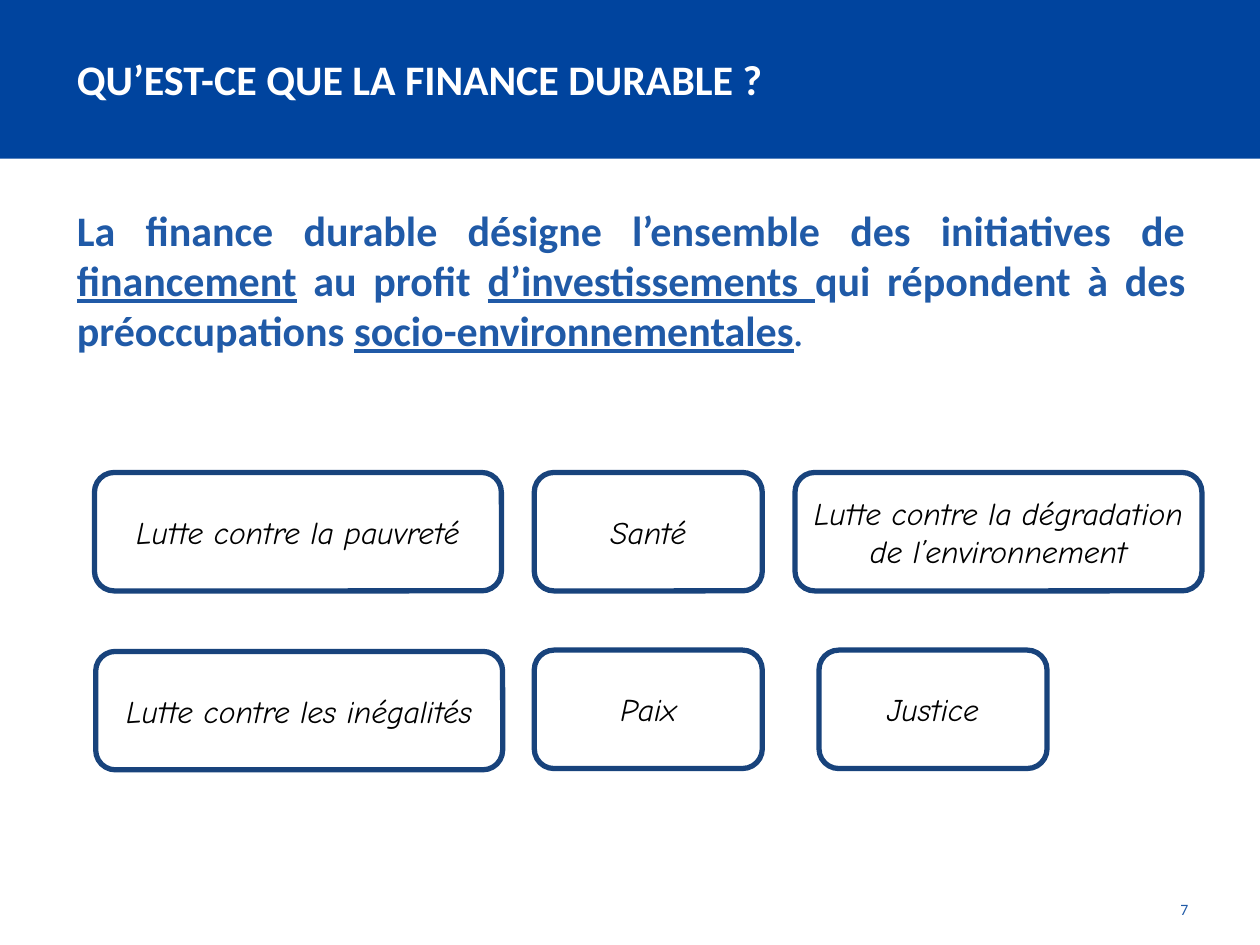
from lxml.etree import SubElement
from pptx import Presentation
from pptx.dml.color import RGBColor
from pptx.enum.shapes import MSO_SHAPE as Shape
from pptx.enum.text import MSO_ANCHOR as Anchor, MSO_AUTO_SIZE as AutoSize, PP_ALIGN as Align
from pptx.oxml.ns import qn
from pptx.util import Inches, Pt

BANNER_BLUE, TEXT_BLUE, BORDER_BLUE = "00449E", "205AA7", "18437C"
WHITE, BLACK = "FFFFFF", "000000"

TITLE = "QU’EST-CE QUE LA FINANCE DURABLE ?"
# Definition as (text, underlined) pieces
DEFINITION = [
    ("La finance durable désigne l’ensemble des initiatives de ", False),
    ("financement", True),
    (" au profit ", False),
    ("d’investissements ", True),
    ("qui répondent à des préoccupations ", False),
    ("socio-environnementales", True),
]
WIDE, NARROW, THEME_HEIGHT = 3.23, 1.81, 0.94
# Themes as (text, left, top, width)
THEMES = [
    ("Lutte contre la pauvreté", 0.75, 3.75, WIDE),
    ("Santé", 4.24, 3.75, NARROW),
    ("Lutte contre la dégradation de l’environnement", 6.31, 3.75, WIDE),
    ("Lutte contre les inégalités", 0.76, 5.17, WIDE),
    ("Paix", 4.24, 5.16, NARROW),
    ("Justice", 6.5, 5.16, NARROW),
]


def color(value):
    return RGBColor.from_string(value)


def place(element, left, top, width, height):
    element.left, element.top = Inches(left), Inches(top)
    element.width, element.height = Inches(width), Inches(height)


def style(run, size, ink, face="Calibri", bold=False, italic=False, underline=False):
    font = run.font
    font.size, font.name = Pt(size), face
    font.bold, font.italic, font.underline = bold, italic, underline
    font.color.rgb = color(ink)


def add_banner(slide):
    banner = slide.shapes.add_shape(Shape.RECTANGLE, 0, 0, Inches(10), Inches(1.26))
    banner.shadow.inherit = False
    banner.fill.solid()
    banner.fill.fore_color.rgb = color(BANNER_BLUE)
    banner.line.fill.background()
    # Behind the placeholders
    slide.shapes._spTree.insert(2, banner._element)


def fill_title(title):
    place(title, 0.51, 0, 9, 1.25)
    frame = title.text_frame
    frame.text = TITLE
    frame.auto_size = AutoSize.NONE
    frame.vertical_anchor = Anchor.MIDDLE
    heading = frame.paragraphs[0]
    heading.alignment = Align.LEFT
    style(heading.runs[0], 24, WHITE, bold=True)


def fill_definition(body):
    place(body, 0.51, 1.57, 9, 1.62)
    body.text_frame.auto_size = AutoSize.NONE
    definition = body.text_frame.paragraphs[0]
    definition.alignment = Align.JUSTIFY
    definition.space_before = Pt(0)
    # Plain paragraph: no indent, no bullet
    properties = definition._p.get_or_add_pPr()
    properties.set("marL", "0")
    properties.set("indent", "0")
    SubElement(properties, qn("a:buNone"))
    for text, underlined in DEFINITION:
        piece = definition.add_run()
        piece.text = text
        style(piece, 24, TEXT_BLUE, bold=True, underline=underlined)
    period = definition.add_run()
    period.text = "."
    style(period, 24, TEXT_BLUE, italic=True)


def add_theme(slide, text, left, top, width):
    theme = slide.shapes.add_shape(Shape.ROUNDED_RECTANGLE, Inches(left), Inches(top),
                                   Inches(width), Inches(THEME_HEIGHT))
    theme.shadow.inherit = False
    theme.fill.solid()
    theme.fill.fore_color.rgb = color(WHITE)
    theme.line.color.rgb = color(BORDER_BLUE)
    theme.line.width = Pt(3)
    frame = theme.text_frame
    frame.text = text
    frame.word_wrap = True
    frame.vertical_anchor = Anchor.MIDDLE
    label = frame.paragraphs[0]
    label.alignment = Align.CENTER
    style(label.runs[0], 18, BLACK, face="Comic Neue", italic=True)


def add_page_number(slide, number):
    page = slide.shapes.add_textbox(Inches(8.94), Inches(7.09), Inches(0.59), Inches(0.39))
    page.text_frame.text = number
    page.text_frame.word_wrap = True
    line = page.text_frame.paragraphs[0]
    line.alignment = Align.RIGHT
    style(line.runs[0], 9, TEXT_BLUE)


def main():
    deck = Presentation()
    deck.slide_width, deck.slide_height = Inches(10), Inches(7.5)
    slide = deck.slides.add_slide(deck.slide_layouts[1])

    # Heading and definition
    add_banner(slide)
    fill_title(slide.shapes.title)
    fill_definition(slide.placeholders[1])

    # Concerns addressed
    for theme in THEMES:
        add_theme(slide, *theme)

    add_page_number(slide, "7")
    deck.save("out.pptx")


if __name__ == "__main__":
    main()
